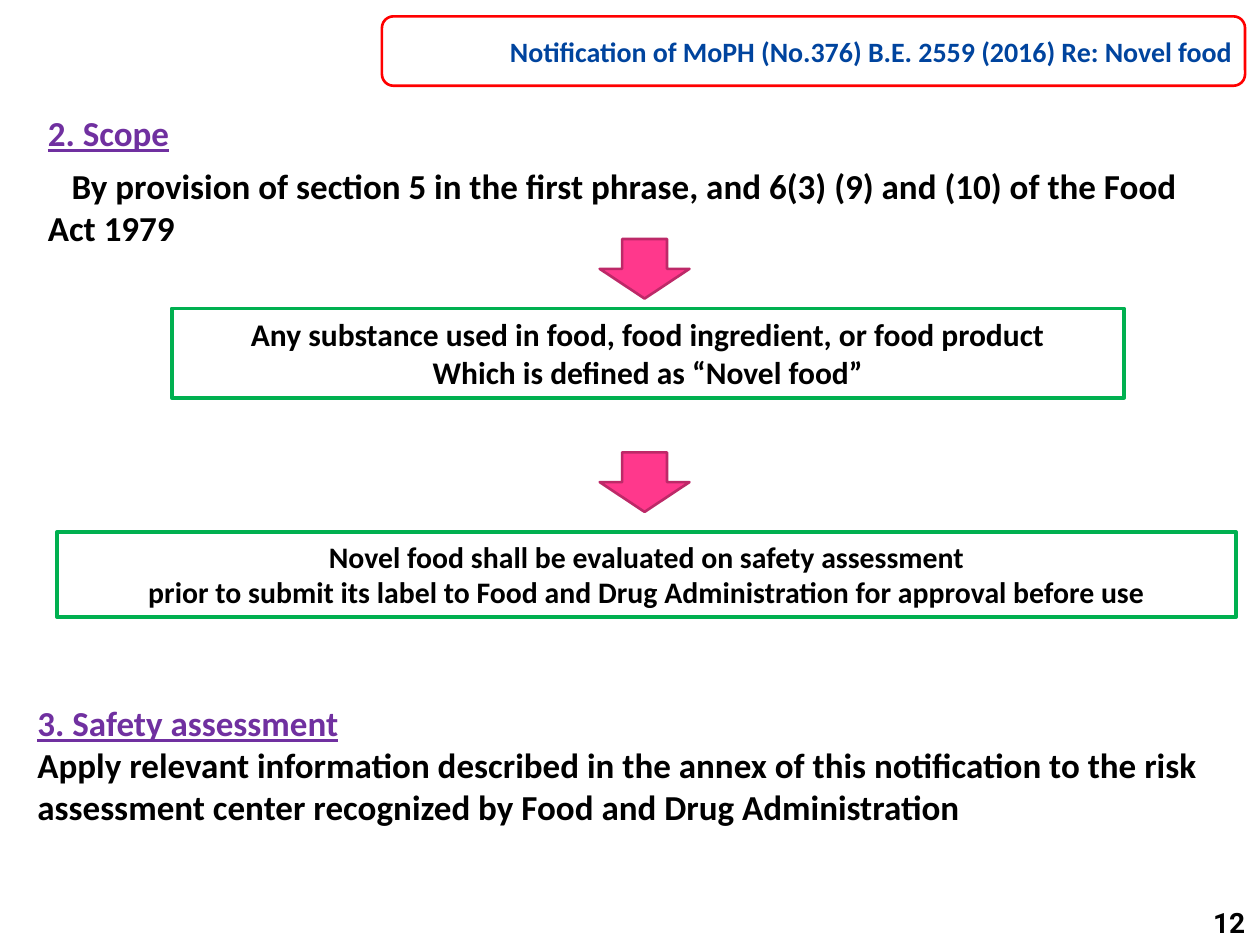
from pptx import Presentation
from pptx import util as u
from pptx.dml.color import RGBColor
from pptx.enum import shapes, text
from pptx.oxml.ns import qn

BLACK, PURPLE, GREEN = "000000", "7030A0", "00B050"
ALIGN = text.PP_ALIGN
ANCHOR = text.MSO_ANCHOR


def rgb(hex_color):
    return RGBColor.from_string(hex_color)


def place(sp, left, top, width, height):
    sp.left, sp.top = u.Cm(left), u.Cm(top)
    sp.width, sp.height = u.Cm(width), u.Cm(height)


def style(p, size, color, align=ALIGN.LEFT, font="Calibri", underline=False):
    p.alignment = align
    p.space_before = u.Pt(0)
    for r in p.runs:
        f = r.font
        f.name, f.size, f.bold = font, u.Pt(size), True
        f.underline = underline
        f.color.rgb = rgb(color)


def add_outline(s, kind, box, line, width, fill=None):
    sp = s.shapes.add_shape(kind, *[u.Cm(v) for v in box])
    sp.shadow.inherit = False
    if fill:
        sp.fill.solid()
        sp.fill.fore_color.rgb = rgb(fill)
    else:
        sp.fill.background()
    sp.line.color.rgb = rgb(line)
    sp.line.width = u.Pt(width)
    return sp


def add_title(s, title):
    box = (7.7, 0.33, 17.4, 1.4)
    sp = add_outline(s, shapes.MSO_SHAPE.ROUNDED_RECTANGLE, box, "FF0000", 1.5)
    sp = s.shapes.title
    place(sp, *box)
    tf = sp.text_frame
    tf.text = title
    tf.auto_size = text.MSO_AUTO_SIZE.NONE
    tf.vertical_anchor = ANCHOR.MIDDLE
    style(tf.paragraphs[0], 16, "00449E", ALIGN.RIGHT)


def fill_section(sp, box, heading, body, gap=0, indent=0):
    """Underlined heading over one paragraph, without bullets."""
    place(sp, *box)
    tf = sp.text_frame
    tf.text = f"{heading}\n{body}"
    tf.auto_size = text.MSO_AUTO_SIZE.NONE
    head, para = tf.paragraphs
    style(head, 20, PURPLE, underline=True)
    style(para, 20, BLACK)
    head.space_after = u.Pt(gap)
    for p, first in ((head, 0), (para, indent)):
        pPr = p._p.get_or_add_pPr()
        pPr.set("marL", "0")
        pPr.set("indent", str(u.Cm(first)))
        pPr.append(pPr.makeelement(qn("a:buNone"), {}))


def add_step(s, box, lines, size):
    sp = add_outline(s, shapes.MSO_SHAPE.RECTANGLE, box, GREEN, 2.25)
    tf = sp.text_frame
    tf.text = "\n".join(lines)
    tf.word_wrap = False
    tf.vertical_anchor = ANCHOR.TOP
    for p in tf.paragraphs:
        style(p, size, BLACK, ALIGN.CENTER)


def add_arrow(s, top):
    add_outline(s, shapes.MSO_SHAPE.DOWN_ARROW, (12.09, top, 1.81, 1.2),
                "BD2968", 1.5, fill="FF388C")


def add_page_number(s, number):
    sp = s.shapes.add_textbox(u.Cm(23.29), u.Cm(17.73), u.Cm(2.06), u.Cm(1.32))
    tf = sp.text_frame
    tf.text = number
    tf.word_wrap = True
    tf.vertical_anchor = ANCHOR.BOTTOM
    style(tf.paragraphs[0], 16, BLACK, ALIGN.RIGHT, font="Roboto")


def main():
    prs = Presentation()
    prs.slide_width, prs.slide_height = u.Cm(25.4), u.Cm(19.05)
    s = prs.slides.add_slide(prs.slide_layouts[3])  # title and two bodies

    # Heading and text sections
    add_title(s, "Notification of MoPH (No.376) B.E. 2559 (2016) Re: Novel food")
    fill_section(s.placeholders[1], (0.71, 2.13, 24.2, 3.02), "2. Scope",
                 "By provision of section 5 in the first phrase, and 6(3) (9) "
                 "and (10) of the Food Act 1979", gap=6, indent=0.48)
    fill_section(s.placeholders[2], (0.5, 14.02, 24, 3.68),
                 "3. Safety assessment",
                 "Apply relevant information described in the annex of this "
                 "notification to the risk assessment center recognized by "
                 "Food and Drug Administration")

    # Flow from scope to evaluation
    for top in (4.82, 9.12):
        add_arrow(s, top)
    add_step(s, (3.46, 6.22, 19.2, 1.8),
             ["Any substance used in food, food ingredient, or food product",
              "Which is defined as “Novel food”"], 18)
    add_step(s, (1.15, 10.73, 23.77, 1.71),
             ["Novel food shall be evaluated on safety assessment",
              "prior to submit its label to Food and Drug Administration "
              "for approval before use"], 17)

    add_page_number(s, "12")
    prs.save("out.pptx")


if __name__ == "__main__":
    main()
